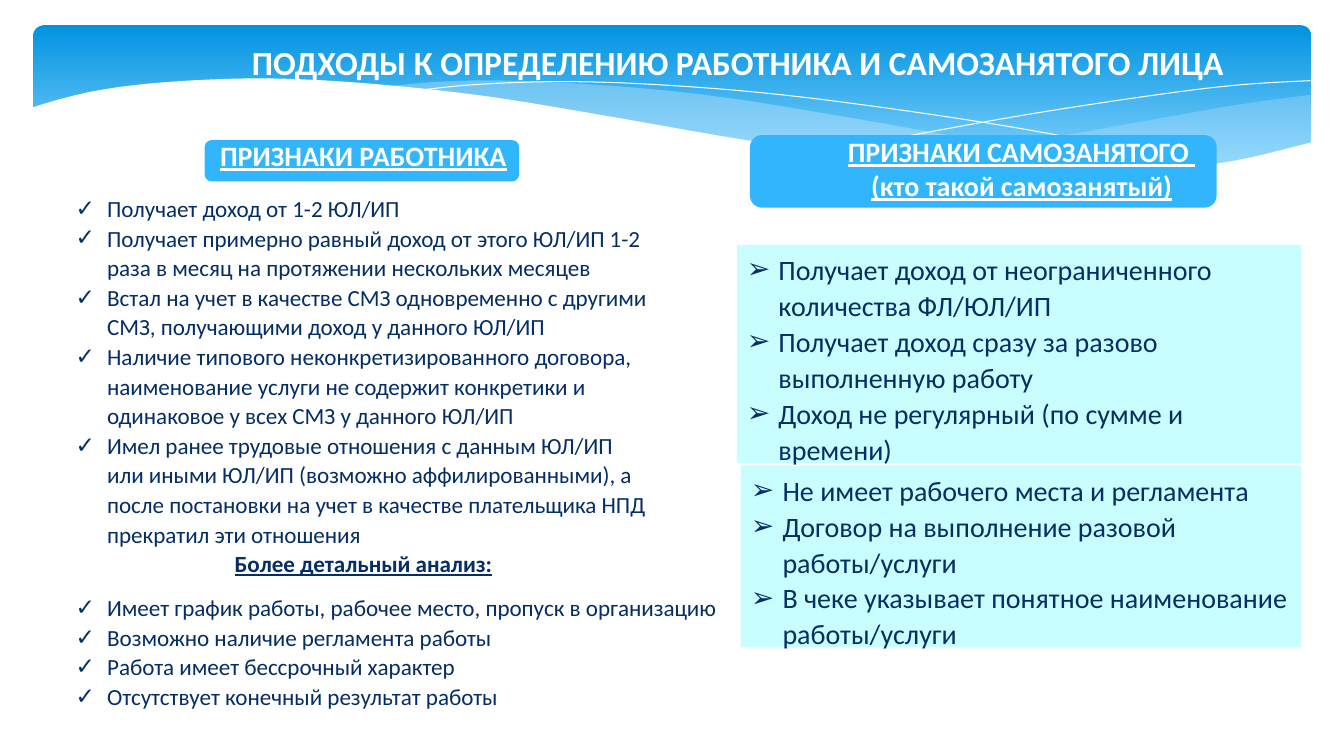
"""Build the slide that contrasts an employee with a self-employed person."""
from dataclasses import dataclass

from lxml.etree import SubElement
from pptx import Presentation
from pptx.dml.color import RGBColor
from pptx.enum.shapes import MSO_SHAPE
from pptx.enum.text import MSO_ANCHOR, MSO_AUTO_SIZE, PP_ALIGN
from pptx.oxml.ns import qn
from pptx.util import Inches, Pt


@dataclass(frozen=True)
class Theme:
    """Colours, font and type sizes of the slide."""
    white: str = "FFFFFF"
    ink: str = "052E65"
    pill: str = "31B6FD"
    panel: str = "C8FEFD"
    wave: str = "C6E7FC"
    banner_top: str = "0293E0"
    banner_bottom: str = "83D3FE"
    font: str = "Calibri"
    title: float = 24
    large: float = 20
    small: float = 16.5


THEME = Theme()
CELLS_PER_INCH = 10
INDENT = 3.13
COMPARISON_LAYOUT = 4

EMPLOYEE_SIGNS = [
    "Получает доход от 1-2 ЮЛ/ИП",
    "Получает примерно равный доход от этого ЮЛ/ИП 1-2 раза в месяц на протяжении нескольких месяцев",
    "Встал на учет в качестве СМЗ одновременно с другими СМЗ, получающими доход у данного ЮЛ/ИП",
    "Наличие типового неконкретизированного договора, наименование услуги не содержит конкретики "
    "и одинаковое у всех СМЗ у данного ЮЛ/ИП",
    "Имел ранее трудовые отношения с данным ЮЛ/ИП или иными ЮЛ/ИП (возможно аффилированными), "
    "а после постановки на учет в качестве плательщика НПД прекратил эти отношения",
]
DETAILED_SIGNS = [
    "Имеет график работы, рабочее место, пропуск в организацию",
    "Возможно наличие регламента работы",
    "Работа имеет бессрочный характер",
    "Отсутствует конечный результат работы",
]
INCOME_SIGNS = [
    "Получает доход от неограниченного количества ФЛ/ЮЛ/ИП",
    "Получает доход сразу за разово выполненную работу",
    "Доход не регулярный (по сумме и времени)",
]
CONTRACT_SIGNS = [
    "Не имеет рабочего места и регламента",
    "Договор на выполнение разовой работы/услуги",
    "В чеке указывает понятное наименование работы/услуги",
]

LOW_WAVE_TOP = [(130, 9.4), (122.7, 10.4), (114.7, 11.8), (103.8, 13.7), (88.2, 16)]
LOW_WAVE_BASE = [(88.2, 16), (97.6, 16.8), (107.1, 17.2), (116.3, 16.9), (123.8, 15.8), (130.1, 14.2)]
LONG_WAVE_TOP = [(119, 16.7), (111.6, 15.9), (98.9, 14.2), (83.9, 11.6), (72.1, 9.7),
                 (61.9, 8.6), (50.6, 8), (43.7, 8.1), (38.2, 8.6)]
LONG_WAVE_BASE = [(38.2, 8.6), (48.3, 9.7), (59.9, 11.6), (75.5, 14.3), (88.7, 16.1),
                  (99.8, 17), (109, 17.3), (115.6, 17), (119, 16.7)]
FALLING_LINE = [(41.2, 9), (47, 8.4), (55.5, 8.1), (65.2, 8.4), (77.5, 9.4), (92.7, 11.4),
                (106, 13.6), (121, 16.6)]
RISING_LINE = [(81.8, 15.1), (92.7, 13), (103.5, 11.1), (115.5, 9.3), (123.2, 8.4), (130, 8)]
PAPER_EDGE = [(130.2, 14.1), (122.7, 15.9), (115.1, 16.9), (107.8, 17.1), (96.9, 16.7),
              (86.3, 15.6), (74, 13.9), (59.6, 11.4), (48.6, 9.6), (39, 8.5), (30.6, 7.9),
              (23.5, 7.8), (15.8, 8.2), (10.1, 8.9), (6.1, 9.8), (3.1, 10.7)]


def cells(*values):
    """Turn grid cells into lengths."""
    return [Inches(value / CELLS_PER_INCH) for value in values]


def curve(points):
    """Sample a smooth curve through the given points."""
    padded = [points[0], *points, points[-1]]
    samples = []
    for before, start, end, after in zip(padded, padded[1:], padded[2:], padded[3:]):
        for step in range(6):
            t = step / 6
            samples.append(tuple(
                b + ((c - a) * t + (2 * a - 5 * b + 4 * c - d) * t**2
                     + (3 * b - a - 3 * c + d) * t**3) / 2
                for a, b, c, d in zip(before, start, end, after)))
    return samples + [points[-1]]


def paint(shape, color):
    """Give a shape a plain fill without line or shadow."""
    shape.fill.solid()
    shape.fill.fore_color.rgb = RGBColor.from_string(color)
    shape.line.fill.background()
    shape.shadow.inherit = False


def draw_outline(page, points, closed):
    """Draw a freeform through grid points."""
    corners = [cells(*point) for point in points]
    builder = page.shapes.build_freeform(*corners[0])
    builder.add_line_segments(corners[1:], close=closed)
    return builder.convert_to_shape()


def add_wave(page, points, color, opacity=100):
    """Add a filled wave with the given opacity in percent."""
    wave = draw_outline(page, points, True)
    paint(wave, color)
    if opacity < 100:
        tone = wave.fill._xPr.find(qn("a:solidFill"))[0]
        SubElement(tone, qn("a:alpha"), val=str(opacity * 1000))


def add_hairline(page, points):
    """Add a thin white curve."""
    hairline = draw_outline(page, curve(points), False)
    hairline.fill.background()
    hairline.line.color.rgb = RGBColor.from_string(THEME.white)
    hairline.line.width = Pt(0)
    hairline.shadow.inherit = False


def add_banner(page):
    """Add the gradient banner and its waves."""
    banner = page.shapes.add_shape(MSO_SHAPE.ROUNDED_RECTANGLE, *cells(3.3, 2.5, 126.8, 15.6))
    banner.adjustments[0] = 0.07
    paint(banner, THEME.banner_top)
    banner.fill.gradient()
    banner.fill.gradient_angle = 270
    stops = zip(banner.fill.gradient_stops, (THEME.banner_top, THEME.banner_bottom), (0, 0.9))
    for stop, color, position in stops:
        stop.color.rgb = RGBColor.from_string(color)
        stop.position = position
    add_wave(page, curve(LOW_WAVE_TOP) + curve(LOW_WAVE_BASE), THEME.wave, 29)
    add_wave(page, curve(LONG_WAVE_TOP) + curve(LONG_WAVE_BASE), THEME.wave, 40)
    add_hairline(page, FALLING_LINE)
    add_hairline(page, RISING_LINE)
    add_wave(page, curve(PAPER_EDGE) + [(3.1, 22.4), (130.3, 22.4), (130.3, 14)], THEME.white)


def write(frame, text, size, color, bold=False, underline=False, centered=True, bullet=None, spacing=1.0):
    """Write one formatted paragraph into a text frame."""
    para = frame.paragraphs[0] if not frame.text else frame.add_paragraph()
    para.alignment = PP_ALIGN.CENTER if centered else PP_ALIGN.LEFT
    para.line_spacing = spacing
    para.space_before = para.space_after = Pt(0)
    properties = para._p.get_or_add_pPr()
    indent = cells(INDENT)[0] if bullet else 0
    properties.set("marL", str(indent))
    properties.set("indent", str(-indent))
    if bullet:
        SubElement(properties, qn("a:buChar"), char=bullet)
    else:
        SubElement(properties, qn("a:buNone"))
    span = para.add_run()
    span.text = text
    span.font.name = THEME.font
    span.font.size = Pt(size)
    span.font.bold = bold
    span.font.underline = underline
    span.font.color.rgb = RGBColor.from_string(color)


def place(box, area, anchor=MSO_ANCHOR.TOP, fit=MSO_AUTO_SIZE.SHAPE_TO_FIT_TEXT):
    """Bring a text box to the front at a grid area and return its frame."""
    box.left, box.top, box.width, box.height = cells(*area)
    box._element.getparent().append(box._element)
    frame = box.text_frame
    frame.word_wrap = True
    frame.auto_size = fit
    frame.vertical_anchor = anchor
    return frame


def fill_list(box, area, items, bullet, size, panel=None):
    """Fill a body placeholder with a bulleted list."""
    frame = place(box, area)
    if panel:
        box.fill.solid()
        box.fill.fore_color.rgb = RGBColor.from_string(panel)
    for item in items:
        write(frame, item, size, THEME.ink, centered=False, bullet=bullet, spacing=1.07)
    return frame


def add_heading(page, pill_area, text_area, lines):
    """Add a column heading as a pill grouped with its text."""
    group = page.shapes.add_group_shape()
    paint(group.shapes.add_shape(MSO_SHAPE.ROUNDED_RECTANGLE, *cells(*pill_area)), THEME.pill)
    frame = place(group.shapes.add_textbox(*cells(*text_area)), text_area)
    for line in lines:
        write(frame, line, THEME.large, THEME.white, bold=True, underline=True)


def main():
    """Build and save the deck."""
    deck = Presentation()
    deck.slide_width, deck.slide_height = cells(133.33, 75)
    page = deck.slides.add_slide(deck.slide_layouts[COMPARISON_LAYOUT])
    title, employee, detailed, contract, income = page.placeholders
    add_banner(page)
    fill_list(contract, (73.5, 46.2, 55.6, 19), CONTRACT_SIGNS, "➢", THEME.large, THEME.panel)
    frame = place(title, (13.1, 2.9, 120.2, 6.5), MSO_ANCHOR.MIDDLE, MSO_AUTO_SIZE.NONE)
    write(frame, "ПОДХОДЫ К ОПРЕДЕЛЕНИЮ РАБОТНИКА И САМОЗАНЯТОГО ЛИЦА", THEME.title, THEME.white, bold=True)
    add_heading(page, (20.3, 13.9, 31.2, 4.1), (2.2, 13.3, 67.7, 4.4), ["ПРИЗНАКИ РАБОТНИКА"])
    frame = fill_list(employee, (6.5, 18.6, 59.1, 39.6), EMPLOYEE_SIGNS, "✓", THEME.small)
    write(frame, "Более детальный анализ:", THEME.small, THEME.ink, bold=True, underline=True, spacing=1.07)
    fill_list(detailed, (6.5, 58.2, 69.6, 15.9), DETAILED_SIGNS, "✓", THEME.small)
    fill_list(income, (73.1, 24.3, 56, 22.6), INCOME_SIGNS, "➢", THEME.large, THEME.panel)
    add_heading(page, (74.4, 13.4, 46.3, 7.2), (66.7, 12.9, 69.3, 7.7),
                ["ПРИЗНАКИ САМОЗАНЯТОГО ", "(кто такой самозанятый)"])
    deck.save("out.pptx")


if __name__ == "__main__":
    main()
